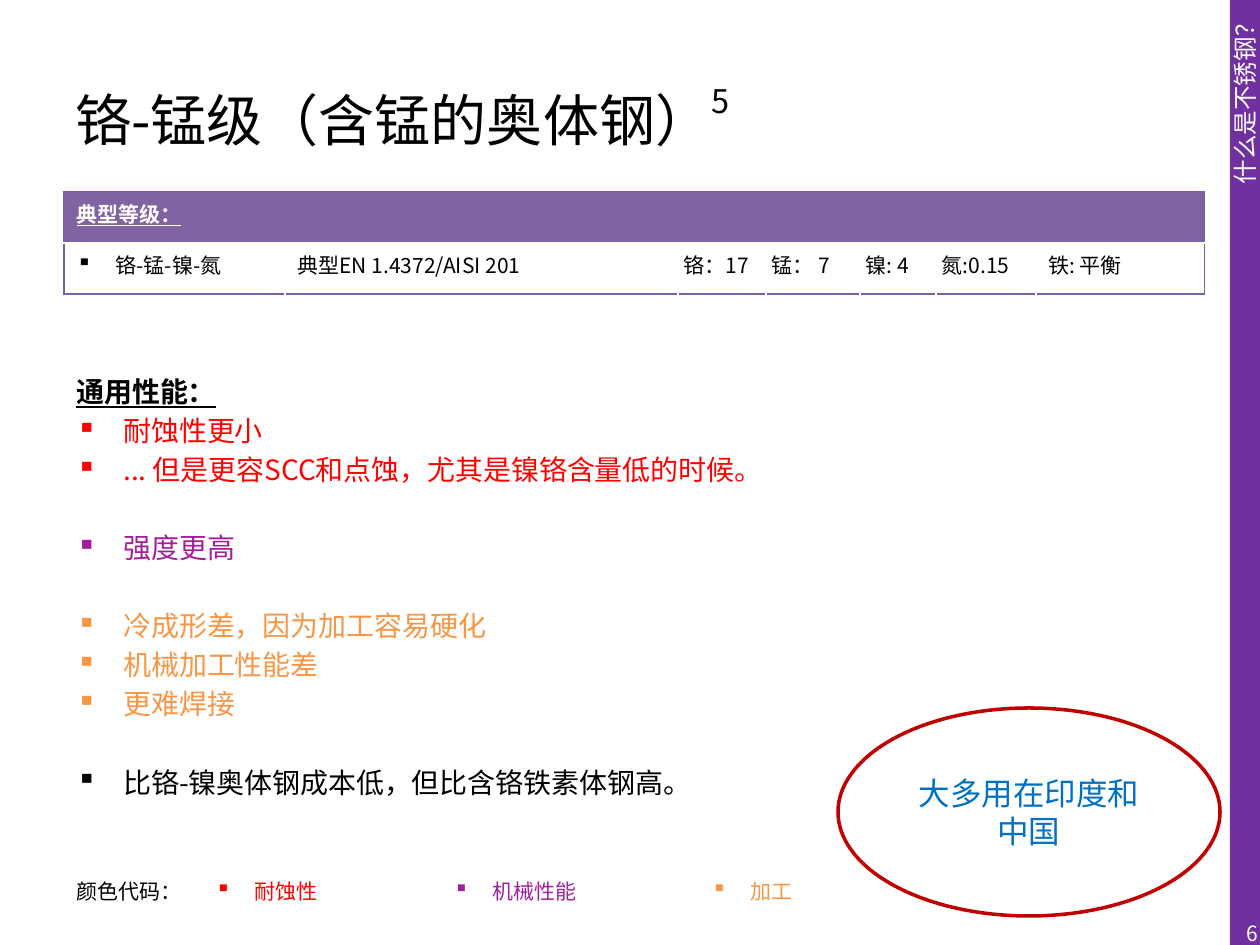
from lxml import etree
from pptx import Presentation
from pptx.dml.color import RGBColor
from pptx.enum.shapes import MSO_SHAPE
from pptx.enum.text import MSO_ANCHOR, PP_ALIGN
from pptx.oxml.ns import qn
from pptx.util import Pt

PX = 914400 / 126
FONT, LEGEND_FONT = "Noto Sans CJK SC", "Calibri"
RECTANGLE, OVAL = MSO_SHAPE.RECTANGLE, MSO_SHAPE.OVAL
MIDDLE, CENTER, RIGHT = MSO_ANCHOR.MIDDLE, PP_ALIGN.CENTER, PP_ALIGN.RIGHT
BLACK = RGBColor(0x00, 0x00, 0x00)
WHITE = RGBColor(0xFF, 0xFF, 0xFF)
PURPLE = RGBColor(0x70, 0x30, 0xA0)
HEADER = RGBColor(0x80, 0x64, 0xA2)
BORDER = RGBColor(0x7D, 0x60, 0xA0)
CORROSION = RGBColor(0xFF, 0x00, 0x00)
MECHANICAL = RGBColor(0xA2, 0x1E, 0x9C)
PROCESSING = RGBColor(0xF7, 0x96, 0x46)
DARK_RED = RGBColor(0xC0, 0x00, 0x00)
BLUE = RGBColor(0x00, 0x70, 0xC0)

GRADE = ["铬-锰-镍-氮", "典型EN 1.4372/AISI 201", "铬：17", "锰： 7",
         "镍: 4", "氮:0.15", "铁: 平衡"]
GRADE_WIDTHS = [221, 393, 88, 94, 76, 100, 169]
NARROW_COLUMNS = range(2, 6)
LEGEND = [("颜色代码：", BLACK, 139), ("耐蚀性", CORROSION, 238),
          ("机械性能", MECHANICAL, 258), ("加工", PROCESSING, 436)]
PROPERTIES = [
    (CORROSION, ["耐蚀性更小", "... 但是更容SCC和点蚀，尤其是镍铬含量低的时候。"]),
    (MECHANICAL, ["强度更高"]),
    (PROCESSING, ["冷成形差，因为加工容易硬化", "机械加工性能差", "更难焊接"]),
    (BLACK, ["比铬-镍奥体钢成本低，但比含铬铁素体钢高。"]),
]


def emu(*lengths):
    return [round(length * PX) for length in lengths]


def format_para(para, size, color, font=FONT, heading=False):
    for span in para.runs:
        span.font.size = Pt(size)
        span.font.name = font
        span.font.color.rgb = color
        span.font.bold = span.font.underline = heading
        east_asian = etree.SubElement(span.font._element, qn("a:ea"))
        east_asian.set("typeface", FONT)


def add_bullet(para, color, indent):
    """Give the paragraph a square bullet with a hanging indent in px."""
    props = para._p.get_or_add_pPr()
    hang, = emu(indent)
    props.set("marL", str(hang))
    props.set("indent", str(-hang))
    tint = etree.SubElement(props, qn("a:buClr"))
    etree.SubElement(tint, qn("a:srgbClr")).set("val", str(color))
    etree.SubElement(props, qn("a:buChar")).set("char", "▪")


def add_border(cell, sides):
    """Draw the named sides, given in the order L, R, T, B."""
    props = cell._tc.get_or_add_tcPr()
    for position, side in enumerate(sides):
        line = etree.Element(qn(f"a:ln{side}"), w=str(Pt(0.75)))
        fill = etree.SubElement(line, qn("a:solidFill"))
        etree.SubElement(fill, qn("a:srgbClr")).set("val", str(BORDER))
        props.insert(position, line)


def add_text(page, box, text, size, color, align=None):
    frame = page.shapes.add_textbox(*emu(*box)).text_frame
    frame.word_wrap = True
    frame.vertical_anchor = MIDDLE
    frame.text = text
    para = frame.paragraphs[0]
    para.alignment = align
    format_para(para, size, color)
    return para


def add_plain_table(page, left, top, widths, rows, row_height):
    box = emu(left, top, sum(widths), rows * row_height)
    table = page.shapes.add_table(rows, len(widths), *box).table
    table.first_row = table.horz_banding = False
    for column, width in zip(table.columns, widths):
        column.width, = emu(width)
    for cell in table.iter_cells():
        cell.fill.background()
    return table


def add_sidebar(page, left, top, width, height):
    bar = page.shapes.add_shape(RECTANGLE, *emu(left, top, width, height))
    bar.shadow.inherit = False
    bar.fill.solid()
    bar.fill.fore_color.rgb = PURPLE
    bar.line.fill.background()
    frame = bar.text_frame
    frame.text = "什么是不锈钢？"
    frame.vertical_anchor = MIDDLE
    frame._txBody.bodyPr.set("vert", "vert270")
    frame.paragraphs[0].alignment = RIGHT
    format_para(frame.paragraphs[0], 14, WHITE)
    add_text(page, (left - 14, top + height - 37, 54, 50), "6", 12, WHITE, RIGHT)


def add_title(page, box):
    para = add_text(page, box, "铬-锰级（含锰的奥体钢）", 32, BLACK)
    note = para.add_run()
    note.text = "5"
    note.font.size = Pt(32)
    note.font.name = FONT
    note.font.color.rgb = BLACK
    note.font._element.set("baseline", "50000")


def add_grade_table(page, left, top):
    table = add_plain_table(page, left, top, GRADE_WIDTHS, 2, 51)
    last = len(GRADE) - 1
    header = table.cell(0, 0)
    header.merge(table.cell(0, last))
    header.text = "典型等级："
    format_para(header.text_frame.paragraphs[0], 12, WHITE, heading=True)
    header.fill.solid()
    header.fill.fore_color.rgb = HEADER
    add_border(header, "LRT")
    for index, text in enumerate(GRADE):
        cell = table.cell(1, index)
        cell.text = text
        para = cell.text_frame.paragraphs[0]
        format_para(para, 12, BLACK)
        if index in NARROW_COLUMNS:
            cell.margin_left, cell.margin_right = emu(6, 6)
        if index == 0:
            add_bullet(para, BLACK, 39)
        add_border(cell, {0: "LB", last: "RB"}.get(index, "B"))


def add_properties(page, left, top, width, height):
    frame = page.shapes.add_textbox(*emu(left, top, width, height)).text_frame
    frame.word_wrap = True
    frame.text = "通用性能："
    heading = frame.paragraphs[0]
    heading.line_spacing = pitch = Pt(22.3)
    format_para(heading, 16, BLACK, heading=True)
    for group, (color, lines) in enumerate(PROPERTIES):
        for index, text in enumerate(lines):
            para = frame.add_paragraph()
            para.text = text
            para.line_spacing = pitch
            para.space_before = pitch if group and index == 0 else Pt(0)
            add_bullet(para, color, 47)
            format_para(para, 16, color)


def add_legend(page, left, top):
    widths = [width for _, _, width in LEGEND]
    table = add_plain_table(page, left, top, widths, 1, 51)
    for index, (text, color, _) in enumerate(LEGEND):
        cell = table.cell(0, index)
        cell.text = text
        para = cell.text_frame.paragraphs[0]
        format_para(para, 12, color, LEGEND_FONT)
        if index:
            add_bullet(para, color, 39)


def add_callout(page, box):
    oval = page.shapes.add_shape(OVAL, *emu(*box))
    oval.shadow.inherit = False
    oval.fill.background()
    oval.line.color.rgb = DARK_RED
    oval.line.width = Pt(2)
    frame = oval.text_frame
    frame.text = "大多用在印度和中国"
    frame.word_wrap = True
    frame.vertical_anchor = MIDDLE
    para = frame.paragraphs[0]
    para.alignment = CENTER
    para.line_spacing = Pt(21.8)
    format_para(para, 18, BLUE)


def main():
    deck = Presentation()
    deck.slide_width, deck.slide_height = emu(1260, 945)
    page = deck.slides.add_slide(deck.slide_layouts[6])
    add_sidebar(page, 1230, 0, 30, 945)
    add_title(page, (63, 38, 1134, 158))
    add_properties(page, 64, 363, 1134, 417)
    add_grade_table(page, 64, 192)
    add_legend(page, 64, 869)
    add_callout(page, (838, 708, 382, 208))
    deck.save("out.pptx")


if __name__ == "__main__":
    main()
